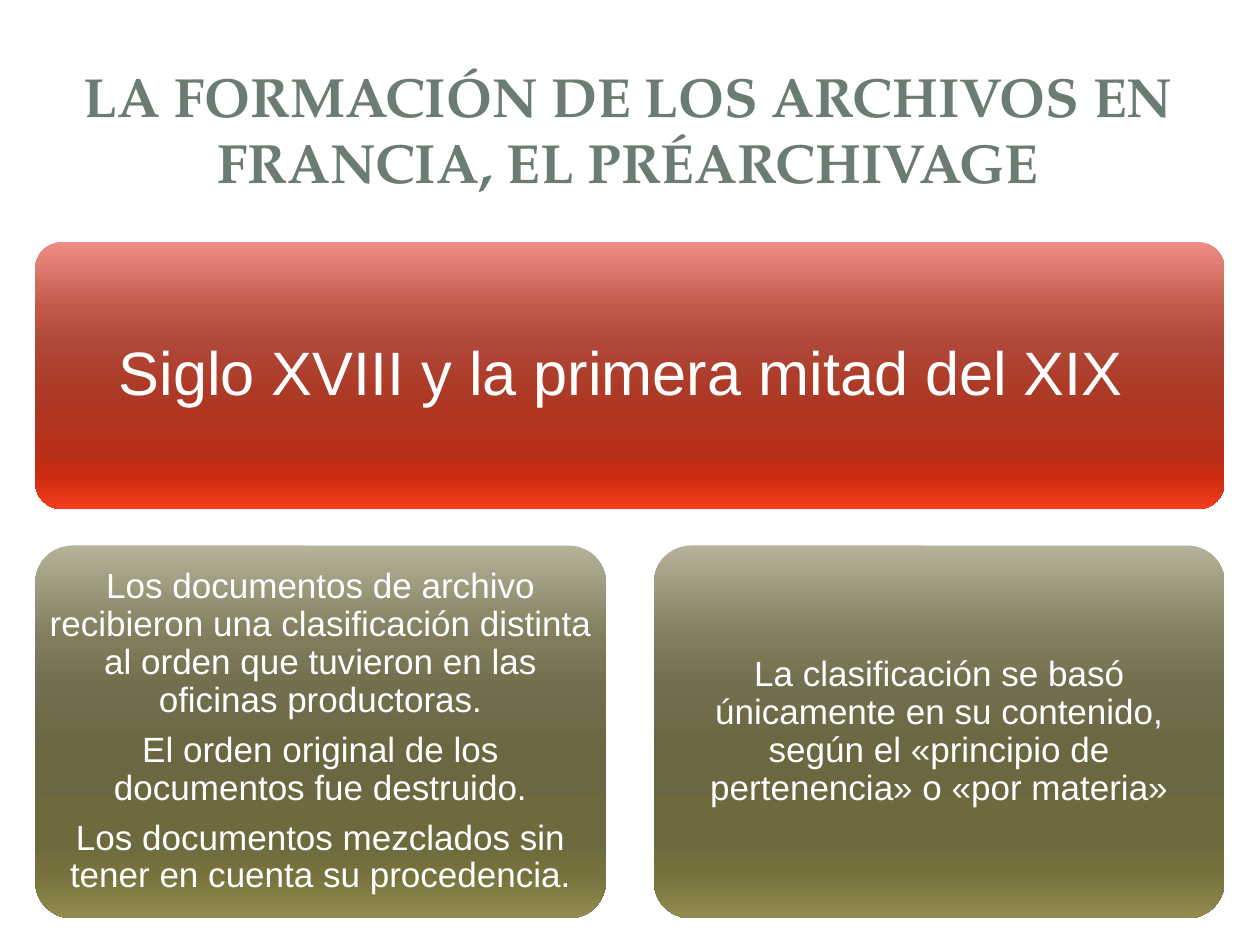
import pptx
import pptx.util
import pptx.dml.color
import pptx.enum.shapes
import pptx.enum.text
import pptx.oxml
import pptx.oxml.ns
from pptx.util import Inches

RED = [(0, "EF8E85"), (25, "C1584A"), (38, "B04839"), (55, "AD3A26"),
       (80, "BA2F18"), (88, "CD2C10"), (100, "F63D1F")]
OLIVE = [(0, "B5B299"), (25, "807C5C"), (38, "726F4F"), (55, "6B6741"),
         (80, "6E6A3D"), (88, "77723D"), (100, "928C50")]


def format_run(r, font, size, color, bold=False):
    r.font.name = font
    r.font.size = pptx.util.Pt(size)
    r.font.bold = bold
    r.font.color.rgb = pptx.dml.color.RGBColor.from_string(color)


def set_gradient(sp, stops):
    sp.fill.gradient()
    sp.fill.gradient_angle = 270  # counter-clockwise: top to bottom
    gs_list = sp._element.spPr.find(".//" + pptx.oxml.ns.qn("a:gsLst"))
    for gs in list(gs_list):
        gs_list.remove(gs)
    for pos, color in stops:
        gs_list.append(pptx.oxml.parse_xml(
            f'<a:gs {pptx.oxml.ns.nsdecls("a")} pos="{pos * 1000}">'
            f'<a:srgbClr val="{color}"/></a:gs>'))


prs = pptx.Presentation()
prs.slide_width, prs.slide_height = Inches(10), Inches(7.5)
s = prs.slides.add_slide(prs.slide_layouts[5])

# Title
title = s.shapes.title
title.left, title.top = Inches(0.47), Inches(0.45)
title.width, title.height = Inches(9.03), Inches(1.14)
tf = title.text_frame
tf.text = "LA FORMACIÓN DE LOS ARCHIVOS EN FRANCIA, EL PRÉARCHIVAGE"
tf.word_wrap = True
tf.auto_size = pptx.enum.text.MSO_AUTO_SIZE.NONE
tf.vertical_anchor = pptx.enum.text.MSO_ANCHOR.MIDDLE
p = tf.paragraphs[0]
p.alignment = pptx.enum.text.PP_ALIGN.CENTER
format_run(p.runs[0], "TeX Gyre Pagella", 31.5, "6B7D72", bold=True)

# Period on top, two consequences below: left, top, width, height, inset, size
boxes = [
    (0.28, 1.92, 9.44, 2.12, 0.09, 35, RED,
     ["Siglo XVIII y la primera mitad del XIX "]),
    (0.28, 4.33, 4.53, 2.96, 0, 20, OLIVE,
     ["Los documentos de archivo recibieron una clasificación distinta "
      "al orden que tuvieron en las oficinas productoras.",
      "El orden original de los documentos fue destruido.",
      "Los documentos mezclados sin tener en cuenta su procedencia."]),
    (5.19, 4.33, 4.53, 2.96, 0, 20, OLIVE,
     ["La clasificación se basó únicamente en su contenido, según el "
      "«principio de pertenencia» o «por materia»"]),
]
for left, top, width, height, inset, size, stops, texts in boxes:
    sp = s.shapes.add_shape(pptx.enum.shapes.MSO_SHAPE.ROUNDED_RECTANGLE,
                            Inches(left), Inches(top), Inches(width), Inches(height))
    sp.adjustments[0] = 0.1
    sp.shadow.inherit = False
    sp.line.fill.background()
    set_gradient(sp, stops)
    tf = sp.text_frame
    tf.word_wrap = True
    tf.vertical_anchor = pptx.enum.text.MSO_ANCHOR.MIDDLE
    tf.margin_left = tf.margin_right = Inches(inset)
    tf.margin_top = tf.margin_bottom = Inches(inset)
    tf.text = "\n".join(texts)
    for p in tf.paragraphs:
        p.alignment = pptx.enum.text.PP_ALIGN.CENTER
        p.line_spacing = 0.9
        p.space_after = pptx.util.Pt(0.35 * size)
        format_run(p.runs[0], "Arial", size, "FFFFFF")

prs.save("out.pptx")
